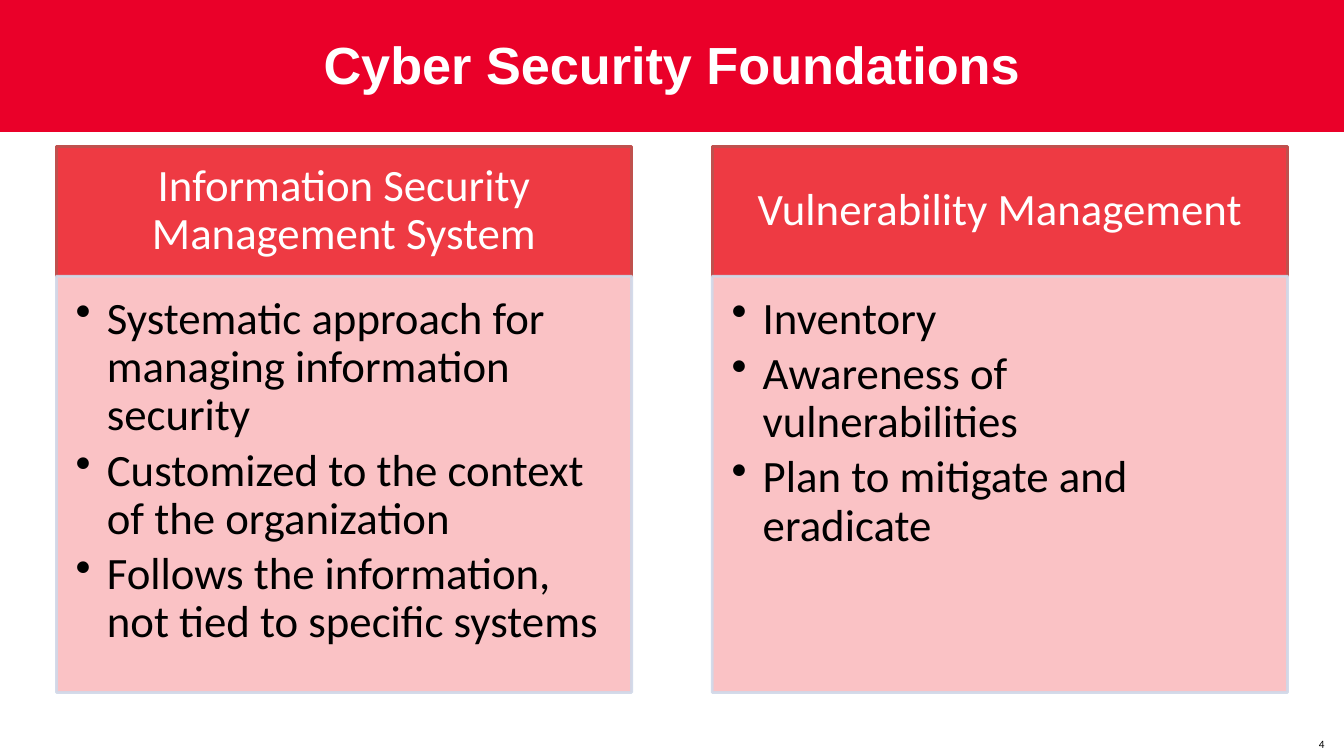
from dataclasses import dataclass

from lxml import etree
from pptx import Presentation
from pptx.dml.color import RGBColor
from pptx.enum.shapes import MSO_SHAPE
from pptx.enum.text import MSO_ANCHOR, PP_ALIGN
from pptx.oxml.ns import qn
from pptx.shapes.autoshape import Shape
from pptx.slide import Slide
from pptx.util import Inches, Pt

RECTANGLE = MSO_SHAPE.RECTANGLE
MIDDLE, TOP = MSO_ANCHOR.MIDDLE, MSO_ANCHOR.TOP
CENTER, LEFT = PP_ALIGN.CENTER, PP_ALIGN.LEFT

BANNER_RED = RGBColor(0xEA, 0x00, 0x29)
HEADING_RED = RGBColor(0xEE, 0x3A, 0x43)
HEADING_EDGE = RGBColor(0xC0, 0x50, 0x4D)
BODY_PINK = RGBColor(0xFA, 0xC2, 0xC5)
BODY_EDGE = RGBColor(0xD0, 0xD8, 0xE8)
WHITE = RGBColor(0xFF, 0xFF, 0xFF)
BLACK = RGBColor(0x00, 0x00, 0x00)

# Page grid: two equal columns between the side margins
SLIDE_W, SLIDE_H = Inches(13.33), Inches(7.5)
MARGIN, GUTTER = Inches(0.56), Inches(0.8)
COLUMN_W = (SLIDE_W - 2 * MARGIN - GUTTER) // 2
BANNER_H = Inches(1.31)
HEADING_TOP, HEADING_H = Inches(1.45), Inches(1.29)
BODY_TOP, BODY_H = HEADING_TOP + HEADING_H, Inches(4.13)
NUMBER_W, NUMBER_H = Inches(0.44), Inches(0.24)
BULLET_INDENT = Inches(0.31)


@dataclass(frozen=True)
class Box:
    left: int
    top: int
    width: int
    height: int


@dataclass(frozen=True)
class TextStyle:
    frame: dict
    paragraph: dict
    font: dict
    color: RGBColor
    bulleted: bool = False


@dataclass(frozen=True)
class Topic:
    heading: str
    points: tuple[str, ...]


TITLE_STYLE = TextStyle(
    {"vertical_anchor": MIDDLE},
    {"alignment": CENTER, "line_spacing": Pt(41.3)},
    {"name": "Arial", "size": Pt(37.3), "bold": True}, WHITE)
NUMBER_STYLE = TextStyle(
    {"vertical_anchor": MIDDLE}, {"alignment": CENTER},
    {"name": "Calibri", "size": Pt(8)}, BLACK)
HEADING_STYLE = TextStyle(
    {"vertical_anchor": MIDDLE,
     "margin_left": Inches(0.25), "margin_right": Inches(0.25),
     "margin_top": Inches(0.14), "margin_bottom": Inches(0.14)},
    {"alignment": CENTER, "line_spacing": 0.9},
    {"name": "Calibri", "size": Pt(32)}, WHITE)
BODY_STYLE = TextStyle(
    {"vertical_anchor": TOP,
     "margin_left": Inches(0.19), "margin_right": Inches(0.25),
     "margin_top": Inches(0.19), "margin_bottom": Inches(0.28)},
    {"alignment": LEFT, "line_spacing": 0.9, "space_after": Pt(4.8)},
    {"name": "Calibri", "size": Pt(32)}, BLACK, bulleted=True)

TOPICS = (
    Topic("Information Security Management System", (
        "Systematic approach for managing information security",
        "Customized to the context of the organization",
        "Follows the information, not tied to specific systems")),
    Topic("Vulnerability Management", (
        "Inventory",
        "Awareness of vulnerabilities",
        "Plan to mitigate and eradicate")),
)


def apply_format(target: object, values: dict) -> None:
    for name, value in values.items():
        setattr(target, name, value)


def write_text(shape: Shape, lines: tuple[str, ...], style: TextStyle) -> None:
    frame = shape.text_frame
    frame.word_wrap = True
    apply_format(frame, style.frame)
    frame.text = "\n".join(lines)
    for paragraph in frame.paragraphs:
        if style.bulleted:
            properties = paragraph._p.get_or_add_pPr()
            properties.set("marL", str(BULLET_INDENT))
            properties.set("indent", str(-BULLET_INDENT))
            etree.SubElement(properties, qn("a:buChar")).set("char", "•")
        apply_format(paragraph, style.paragraph)
        apply_format(paragraph.runs[0].font, style.font)
        paragraph.runs[0].font.color.rgb = style.color


def add_panel(slide: Slide, box: Box, fill: RGBColor,
              edge: RGBColor | None = None) -> Shape:
    panel = slide.shapes.add_shape(
        RECTANGLE, box.left, box.top, box.width, box.height)
    panel.shadow.inherit = False
    panel.fill.solid()
    panel.fill.fore_color.rgb = fill
    if edge is None:
        panel.line.fill.background()
    else:
        panel.line.color.rgb = edge
        panel.line.width = Pt(2)
    return panel


def add_topic(slide: Slide, column: int, topic: Topic) -> None:
    left = MARGIN + column * (COLUMN_W + GUTTER)
    heading = add_panel(slide, Box(left, HEADING_TOP, COLUMN_W, HEADING_H),
                        HEADING_RED, HEADING_EDGE)
    write_text(heading, (topic.heading,), HEADING_STYLE)

    body = add_panel(slide, Box(left, BODY_TOP, COLUMN_W, BODY_H),
                     BODY_PINK, BODY_EDGE)
    edge_color = body.line._ln.find(".//" + qn("a:srgbClr"))
    etree.SubElement(edge_color, qn("a:alpha")).set("val", "90000")
    write_text(body, topic.points, BODY_STYLE)


def main() -> None:
    deck = Presentation()
    deck.slide_width, deck.slide_height = SLIDE_W, SLIDE_H
    blank_layout = deck.slide_layouts[6]
    slide = deck.slides.add_slide(blank_layout)

    # Title banner
    banner = add_panel(slide, Box(0, 0, SLIDE_W, BANNER_H), BANNER_RED)
    write_text(banner, ("Cyber Security Foundations",), TITLE_STYLE)

    # Slide number in the bottom right corner
    slide_number = slide.shapes.add_textbox(
        SLIDE_W - NUMBER_W, SLIDE_H - NUMBER_H, NUMBER_W, NUMBER_H)
    write_text(slide_number, ("4",), NUMBER_STYLE)

    # Topic columns
    for column, topic in enumerate(TOPICS):
        add_topic(slide, column, topic)

    deck.save("out.pptx")


if __name__ == "__main__":
    main()
